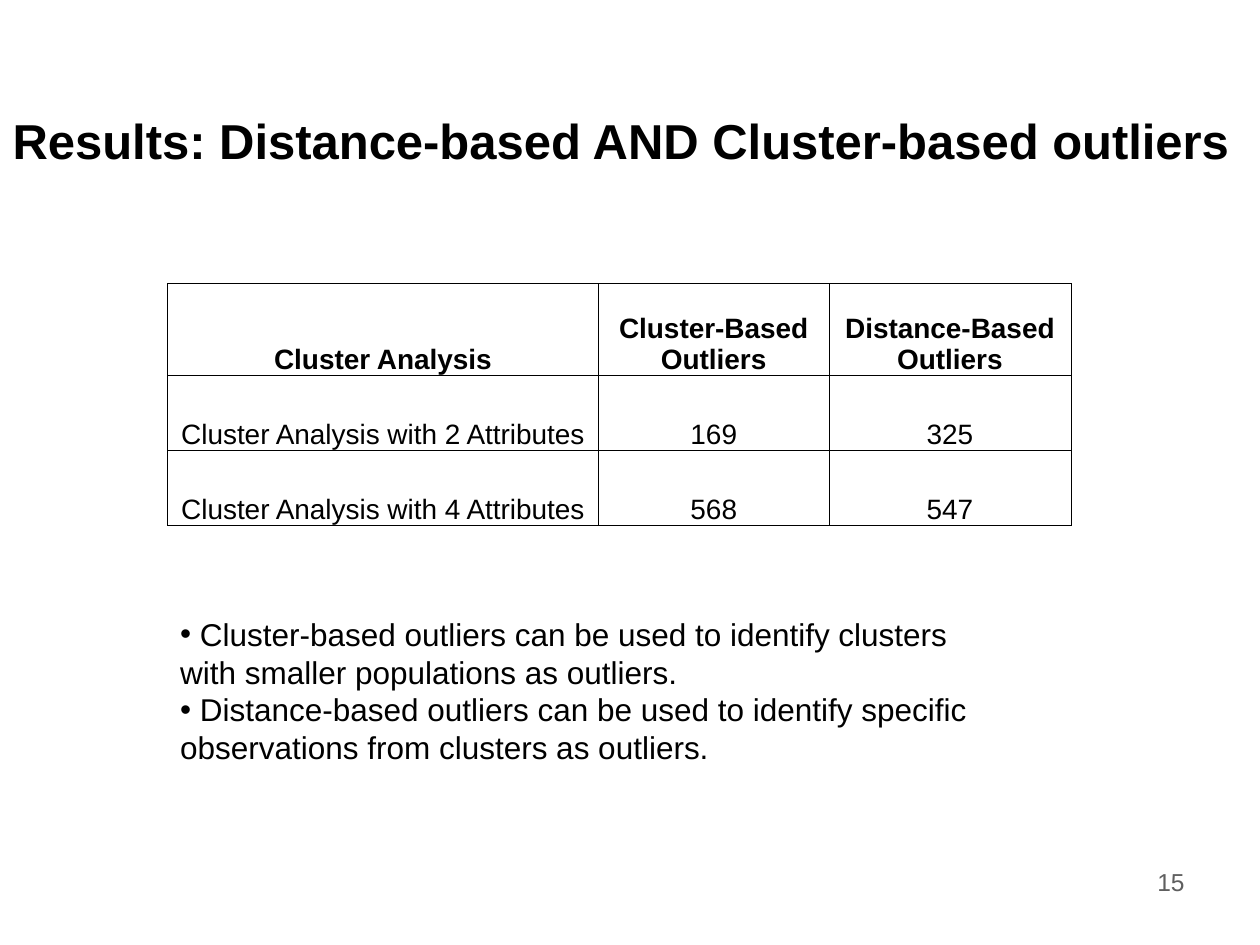
"""Build the slide that compares cluster-based and distance-based outliers."""
import lxml.etree
import pptx
import pptx.dml.color
import pptx.enum.text
import pptx.oxml.ns
import pptx.util

Inches = pptx.util.Inches
Align = pptx.enum.text.PP_ALIGN
Anchor = pptx.enum.text.MSO_ANCHOR
AutoSize = pptx.enum.text.MSO_AUTO_SIZE
qn = pptx.oxml.ns.qn

BLACK = pptx.dml.color.RGBColor(0x00, 0x00, 0x00)
GRAY = pptx.dml.color.RGBColor(0x5F, 0x5F, 0x5F)
FONT_NAME = "Arial"

COLUMN_WIDTHS = (3.42, 1.83, 1.92)
ROW_HEIGHTS = (0.73, 0.595, 0.595)
ROWS = (
    ("Cluster Analysis", "Cluster-Based Outliers", "Distance-Based Outliers"),
    ("Cluster Analysis with 2 Attributes", "169", "325"),
    ("Cluster Analysis with 4 Attributes", "568", "547"),
)
FINDINGS = (
    " Cluster-based outliers can be used to identify clusters with smaller populations as outliers.",
    " Distance-based outliers can be used to identify specific observations from clusters as outliers.",
)


def place(shape, left, top, width, height):
    """Move and size a shape, in inches."""
    shape.left, shape.top = Inches(left), Inches(top)
    shape.width, shape.height = Inches(width), Inches(height)


def format_text(text_frame, size, alignment, color=BLACK, bold=False):
    """Align every paragraph and set the font of its runs."""
    for paragraph in text_frame.paragraphs:
        paragraph.alignment = alignment
        for run in paragraph.runs:
            run.font.name = FONT_NAME
            run.font.size = pptx.util.Pt(size)
            run.font.bold = bold
            run.font.color.rgb = color


def add_title(slide, text):
    """Fill the title placeholder."""
    title = slide.shapes.title
    place(title, 0, 0.67, 10, 0.88)
    title.text_frame.text = text
    title.text_frame.auto_size = AutoSize.NONE
    title.text_frame.vertical_anchor = Anchor.MIDDLE
    format_text(title.text_frame, 28, Align.LEFT, bold=True)


def add_bullets(slide, items):
    """Fill the body placeholder with unindented bullets."""
    body = slide.placeholders[1]
    place(body, 1.33, 4.83, 6.75, 1.31)
    text_frame = body.text_frame
    text_frame.text = "\n".join(items)
    text_frame.auto_size = AutoSize.SHAPE_TO_FIT_TEXT
    for paragraph in text_frame.paragraphs:
        properties = paragraph._p.get_or_add_pPr()
        properties.set("marL", "0")
        properties.set("indent", "0")
        lxml.etree.SubElement(properties, qn("a:buChar"), char="•")
        paragraph.space_before = pptx.util.Pt(0)
    format_text(text_frame, 18, Align.LEFT)


def add_borders(cell):
    """Draw a thin black line on each side of a cell."""
    properties = cell._tc.get_or_add_tcPr()
    for index, side in enumerate(("lnL", "lnR", "lnT", "lnB")):
        line = properties.makeelement(qn(f"a:{side}"), {"w": str(pptx.util.Pt(0.5))})
        fill = lxml.etree.SubElement(line, qn("a:solidFill"))
        lxml.etree.SubElement(fill, qn("a:srgbClr"), val=str(BLACK))
        properties.insert(index, line)


def format_cell(cell, text, bold):
    """Write a cell centred at its bottom edge."""
    cell.text_frame.text = text
    cell.vertical_anchor = Anchor.BOTTOM
    cell.margin_left = cell.margin_right = cell.margin_top = Inches(0.01)
    cell.margin_bottom = 0
    cell.fill.background()
    format_text(cell.text_frame, 16, Align.CENTER, bold=bold)
    add_borders(cell)


def add_results_table(slide):
    """Add the table of outlier counts."""
    frame = slide.shapes.add_table(
        len(ROWS), len(COLUMN_WIDTHS), Inches(1.33), Inches(2.25),
        Inches(sum(COLUMN_WIDTHS)), Inches(sum(ROW_HEIGHTS)))
    table = frame.table
    table.horz_banding = False
    for column, width in zip(table.columns, COLUMN_WIDTHS):
        column.width = Inches(width)
    for row_index, (row, height) in enumerate(zip(table.rows, ROW_HEIGHTS)):
        row.height = Inches(height)
        for cell, text in zip(row.cells, ROWS[row_index]):
            format_cell(cell, text, bold=row_index == 0)


def add_page_number(slide, number):
    """Add the page number at the lower right."""
    box = slide.shapes.add_textbox(Inches(7.17), Inches(6.83), Inches(2.33), Inches(0.52))
    box.text_frame.word_wrap = True
    box.text_frame.text = number
    format_text(box.text_frame, 14, Align.RIGHT, color=GRAY)


def main():
    """Build and save the presentation."""
    presentation = pptx.Presentation()
    presentation.slide_width = Inches(10)
    presentation.slide_height = Inches(7.5)
    slide = presentation.slides.add_slide(presentation.slide_layouts[1])
    add_title(slide, "Results: Distance-based AND Cluster-based outliers")
    add_page_number(slide, "15")
    add_bullets(slide, FINDINGS)
    add_results_table(slide)
    presentation.save("out.pptx")


if __name__ == "__main__":
    main()
